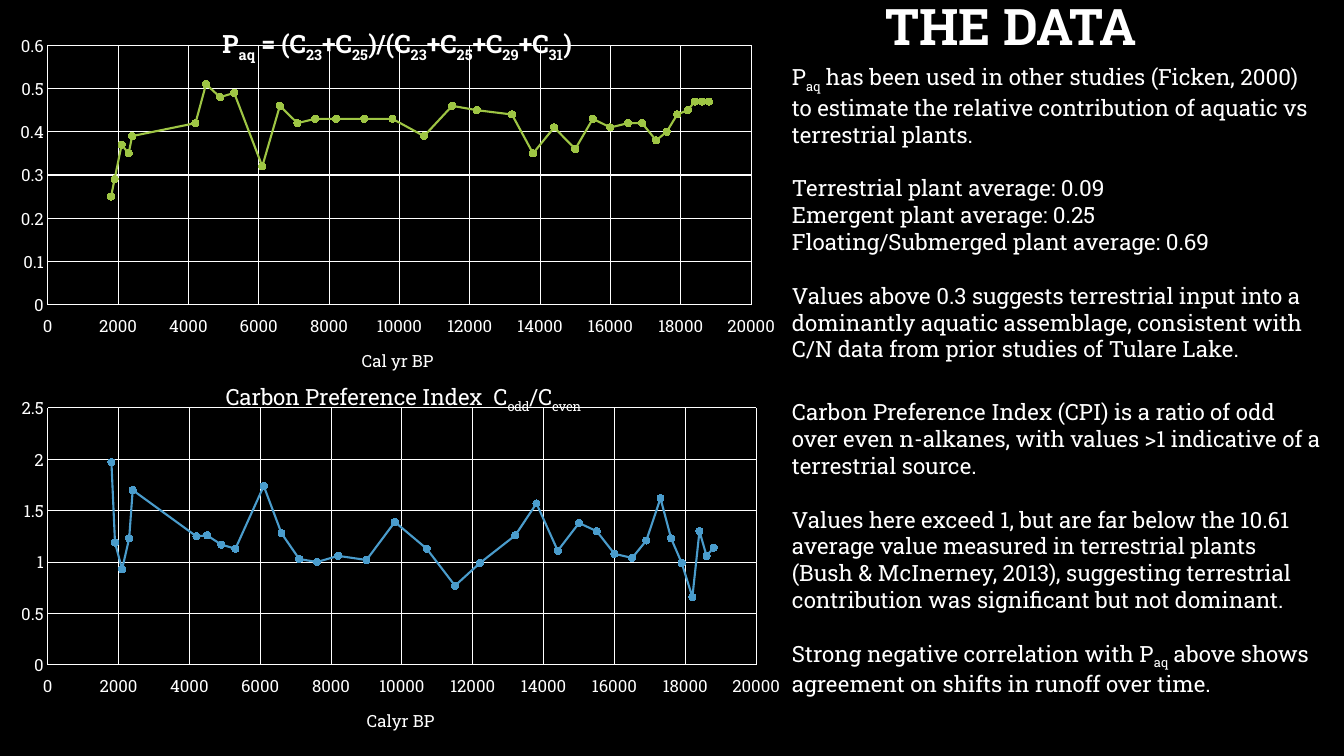
from lxml import etree
from pptx import Presentation
from pptx.chart.data import XyChartData
from pptx.dml.color import RGBColor
from pptx.enum import chart as kinds, text
from pptx.oxml import ns
from pptx.util import Cm, Pt

BLACK = RGBColor(0x00, 0x00, 0x00)
WHITE = RGBColor(0xFF, 0xFF, 0xFF)
GREEN = RGBColor(0x9E, 0xC5, 0x44)
BLUE = RGBColor(0x4A, 0x9C, 0xCC)
FACE = "Roboto Slab"

# Sample ages (cal yr BP) and the two measured indices
AGES = [1800, 1900, 2100, 2300, 2400, 4200, 4500, 4900, 5300, 6100, 6600, 7100,
        7600, 8200, 9000, 9800, 10700, 11500, 12200, 13200, 13800, 14400,
        15000, 15500, 16000, 16500, 16900, 17300, 17600, 17900, 18200, 18400,
        18600, 18800]
PAQ = [0.25, 0.29, 0.37, 0.35, 0.39, 0.42, 0.51, 0.48, 0.49, 0.32, 0.46, 0.42,
       0.43, 0.43, 0.43, 0.43, 0.39, 0.46, 0.45, 0.44, 0.35, 0.41, 0.36, 0.43,
       0.41, 0.42, 0.42, 0.38, 0.4, 0.44, 0.45, 0.47, 0.47, 0.47]
CPI = [1.97, 1.19, 0.93, 1.23, 1.7, 1.25, 1.26, 1.17, 1.13, 1.74, 1.28, 1.03,
       1, 1.06, 1.02, 1.39, 1.13, 0.77, 0.99, 1.26, 1.57, 1.11, 1.38, 1.3,
       1.08, 1.04, 1.21, 1.62, 1.23, 0.99, 0.66, 1.3, 1.06, 1.14]


def style(font, size, bold=False):
    font.name, font.size, font.bold = FACE, Pt(size), bold
    font.color.rgb = WHITE


def write(para, words, size, bold=False):
    """Fill a paragraph; parts between bars are subscripts."""
    for i, part in enumerate(words.split("|")):
        run = para.add_run()
        run.text = part
        style(run.font, size, bold)
        if i % 2:
            run._r.get_or_add_rPr().set("baseline", "-25000")


def place(node, spot, inner=False):
    """Give a chart part a fixed layout, in shares of the chart."""
    box = node.find(ns.qn("c:layout"))
    if box is None:
        box = etree.Element(ns.qn("c:layout"))
        node.insert(0, box)
    man = etree.SubElement(box, ns.qn("c:manualLayout"))
    tags = [("layoutTarget", "inner")] if inner else []
    tags += [("xMode", "edge"), ("yMode", "edge")]
    tags += zip("xywh", spot)
    for tag, val in tags:
        etree.SubElement(man, ns.qn("c:" + tag)).set("val", str(val))


class Deck:
    def __init__(self):
        self.prs = Presentation()
        self.prs.slide_width, self.prs.slide_height = Cm(33.87), Cm(19.05)
        self.slide = self.prs.slides.add_slide(self.prs.slide_layouts[5])
        fill = self.slide.background.fill
        fill.solid()
        fill.fore_color.rgb = BLACK

    def title(self, words, x, y, w, h):
        shape = self.slide.shapes.title
        shape.left, shape.top, shape.width, shape.height = map(Cm, (x, y, w, h))
        frame = shape.text_frame
        frame.vertical_anchor = text.MSO_ANCHOR.MIDDLE
        para = frame.paragraphs[0]
        para.alignment = text.PP_ALIGN.RIGHT
        para.line_spacing = 0.9
        write(para, words, 36, True)

    def notes(self, blocks, x, y, w, h):
        """Blocks of paragraphs, one line of space between blocks."""
        box = self.slide.shapes.add_textbox(*map(Cm, (x, y, w, h)))
        frame = box.text_frame
        frame.word_wrap = True
        para = None
        for n, block in enumerate(blocks):
            for i, words in enumerate(block):
                para = frame.add_paragraph() if para else frame.paragraphs[0]
                if n and not i:
                    para.space_before = Pt(19.2)
                write(para, words, 16)

    def axis(self, axis, top, step):
        axis.minimum_scale, axis.maximum_scale, axis.major_unit = 0, top, step
        axis.major_tick_mark = axis.minor_tick_mark = kinds.XL_TICK_MARK.NONE
        axis.has_major_gridlines = True
        for line in (axis.format.line, axis.major_gridlines.format.line):
            line.color.rgb, line.width = WHITE, Pt(0.75)
        style(axis.tick_labels.font, 12)
        axis.tick_labels.number_format = "General"
        axis.tick_labels.number_format_is_linked = False

    def plot(self, vals, color, head, foot, scale, spot, area, at):
        data = XyChartData()
        row = data.add_series("Series 1")
        for age, val in zip(AGES, vals):
            row.add_data_point(age, val)
        chart = self.slide.shapes.add_chart(
            kinds.XL_CHART_TYPE.XY_SCATTER_LINES, *map(Cm, at), data).chart
        style(chart.font, 10)
        chart.has_legend = False
        chart.plots[0].vary_by_categories = False
        # Titles
        words, size, bold = head
        chart.has_title = True
        write(chart.chart_title.text_frame.paragraphs[0], words, size, bold)
        place(chart.chart_title._element, spot)
        ages = chart.category_axis
        write(ages.axis_title.text_frame.paragraphs[0], foot, 12)
        # Axes and plot area
        self.axis(ages, 20000, 2000)
        self.axis(chart.value_axis, *scale)
        ages.tick_label_position = kinds.XL_TICK_LABEL_POSITION.LOW
        place(chart._chartSpace.find(".//" + ns.qn("c:plotArea")), area, True)
        # Line and markers
        line = chart.plots[0].series[0]
        line.smooth = False
        line.format.line.color.rgb, line.format.line.width = color, Pt(1.5)
        mark = line.marker
        mark.style, mark.size = kinds.XL_MARKER_STYLE.CIRCLE, 5
        mark.format.fill.solid()
        mark.format.fill.fore_color.rgb = color
        mark.format.line.color.rgb = color


def main():
    deck = Deck()
    deck.title("THE DATA", 1.98, 0, 26.92, 1.47)

    # Charts on the left
    deck.plot(PAQ, GREEN,
              ("P|aq| = (C|23|+C|25|)/(C|23|+C|25|+C|29|+C|31|)", 18, True),
              "Cal yr BP", (0.6, 0.1), (0.28, 0.06),
              (0.061, 0.12, 0.898, 0.686), (0, 0, 19.74, 9.53))
    deck.plot(CPI, BLUE,
              ("Carbon Preference Index  C|odd|/C|even|", 16, False),
              "Calyr BP", (2.5, 0.5), (0.28, 0.05),
              (0.06, 0.129, 0.891, 0.675), (0, 9.04, 20.04, 9.6))

    # Reading of each chart on the right
    deck.notes([
        ["P|aq| has been used in other studies (Ficken, 2000) to estimate the "
         "relative contribution of aquatic vs terrestrial plants."],
        ["Terrestrial plant average: 0.09",
         "Emergent plant average: 0.25",
         "Floating/Submerged plant average: 0.69"],
        ["Values above 0.3 suggests terrestrial input into a dominantly "
         "aquatic assemblage, consistent with C/N data from prior studies of "
         "Tulare Lake."],
    ], 19.71, 1.47, 13.56, 8.46)
    deck.notes([
        ["Carbon Preference Index (CPI) is a ratio of odd over even n-alkanes, "
         "with values >1 indicative of a terrestrial source."],
        ["Values here exceed 1, but are far below the 10.61 average value "
         "measured in terrestrial plants (Bush & McInerney, 2013), suggesting "
         "terrestrial contribution was significant but not dominant."],
        ["Strong negative correlation with P|aq| above shows agreement on "
         "shifts in runoff over time."],
    ], 19.71, 9.91, 13.87, 9.14)
    deck.prs.save("out.pptx")


if __name__ == "__main__":
    main()
